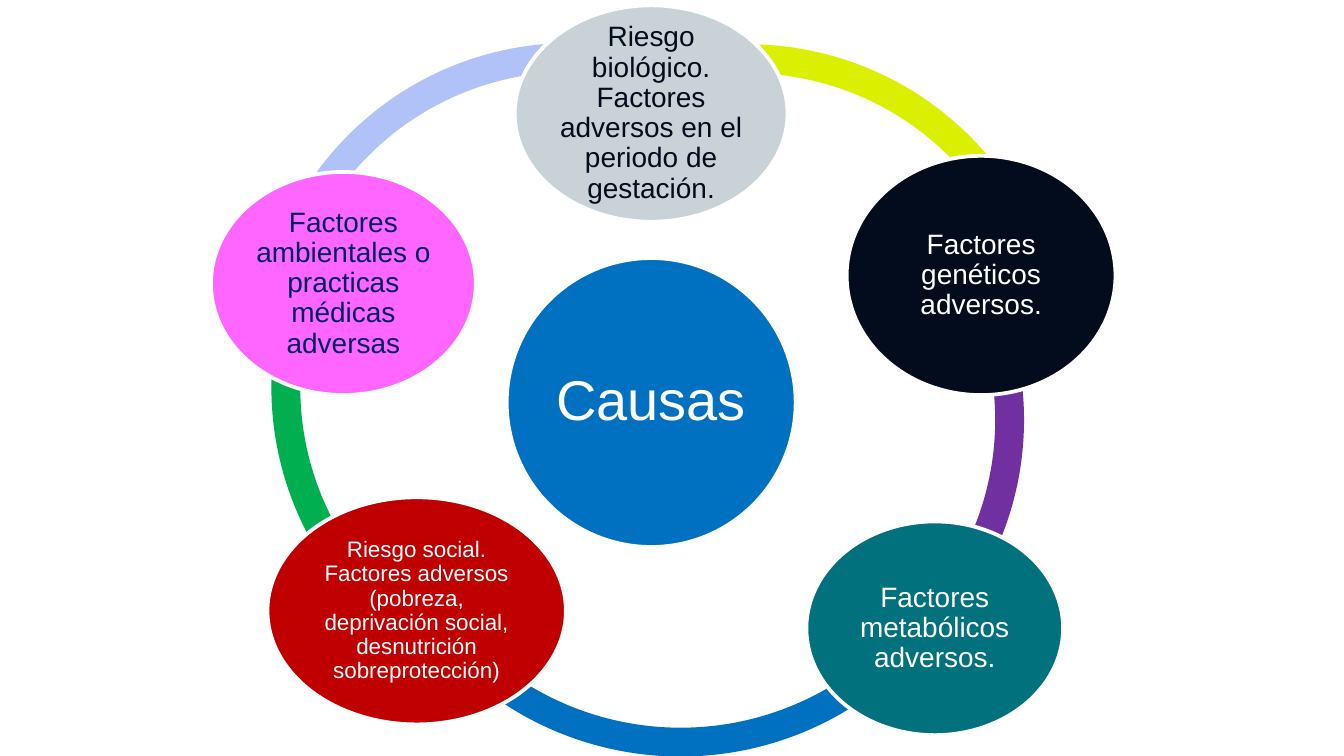
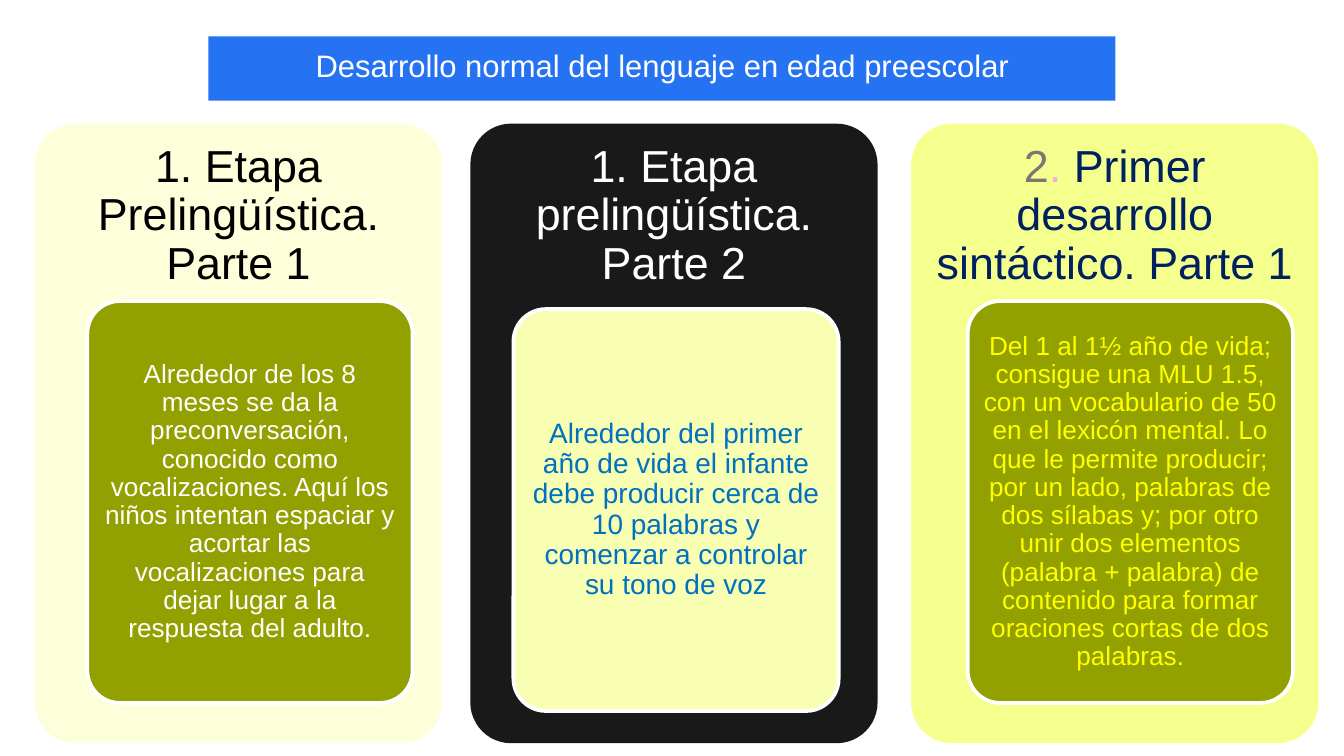
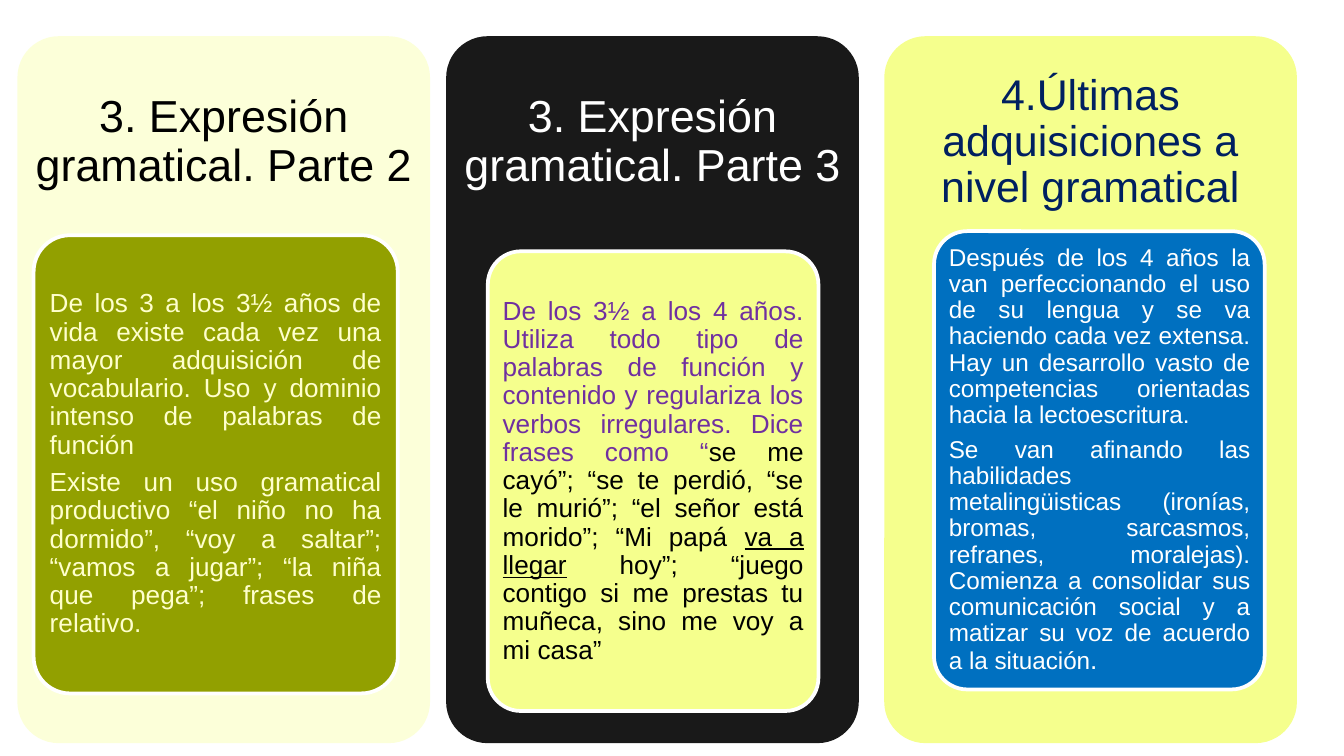
"""Build three slides on the causes and stages of language development."""
from pptx import Presentation
from pptx.dml.color import RGBColor
from pptx.enum.shapes import MSO_SHAPE as SHAPE
from pptx.enum.text import MSO_ANCHOR as ANCHOR, MSO_AUTO_SIZE as FIT, PP_ALIGN as ALIGN
from pptx.util import Pt

PX = 9144
FONT = "Arial"
COLORS = {
    "white": "FFFFFF", "black": "000000", "charcoal": "191919", "ink": "020C1D",
    "navy": "002060", "blue": "0070C0", "banner": "2572F2", "sky": "B0C2F8",
    "green": "00B050", "purple": "7030A0", "lime": "DBF000", "silver": "C9D3D7",
    "teal": "00717D", "red": "C00000", "pink": "FF66FF", "rose": "F5A9E1",
    "gray": "777777", "ivory": "FCFFD9", "lemon": "F5FF8D", "cream": "F8FFB3",
    "olive": "92A000", "yellow": "FFFF00", "pale": "FFFFCC",
}


def draw_shape(page, kind, left, top, width, height, fill, outlined=False):
    """Add a filled preset shape, with a white outline on request."""
    shape = page.shapes.add_shape(kind, left * PX, top * PX, width * PX, height * PX)
    shape.shadow.inherit = False
    shape.fill.solid()
    shape.fill.fore_color.rgb = RGBColor.from_string(COLORS[fill])
    if outlined:
        shape.line.color.rgb = RGBColor.from_string(COLORS["white"])
        shape.line.width = Pt(2)
    else:
        shape.line.fill.background()
    return shape


def write_text(box, paragraphs, size=15, color="white", align=ALIGN.CENTER,
               anchor=ANCHOR.MIDDLE, inset=2, spacing=0.9, after=0.35):
    """Fill a box with paragraphs, each a string or a list of (text, format) spans."""
    frame = box.text_frame
    frame.word_wrap = True
    frame.auto_size = FIT.NONE
    frame.vertical_anchor = anchor
    frame.margin_left = frame.margin_right = inset * PX
    frame.margin_top = frame.margin_bottom = inset * PX
    for index, spans in enumerate(paragraphs):
        para = frame.add_paragraph() if index else frame.paragraphs[0]
        para.alignment = align
        para.line_spacing = spacing
        para.space_before = Pt(0)
        para.space_after = Pt(round(after * size, 1))
        for text, look in [(spans, {})] if isinstance(spans, str) else spans:
            span = para.add_run()
            span.text = text
            span.font.name = FONT
            span.font.size = Pt(look.get("size", size))
            span.font.underline = look.get("underline")
            span.font.color.rgb = RGBColor.from_string(COLORS[look.get("color", color)])


deck = Presentation()
deck.slide_width = 1000 * PX
deck.slide_height = deck.slide_width * 9 // 16
title_layout, blank_layout = deck.slide_layouts[5], deck.slide_layouts[6]

causes_page = deck.slides.add_slide(blank_layout)
arcs = [
    (191, 32, 467, 206.2, 276.1, "sky"),
    (202, 55, 467, 134.3, 200.7, "green"),
    (270, 96, 473, 34, 149.8, "blue"),
    (295, 79, 467, 332, 42.8, "purple"),
    (323, 33, 467, 259.3, 332.9, "lime"),
]
for left, top, width, start, end, fill in arcs:
    arc = draw_shape(causes_page, SHAPE.BLOCK_ARC, left, top, width, 467, fill)
    for index, value in enumerate((start * 0.6, end * 0.6, 0.046)):
        arc.adjustments[index] = value

causes = [
    (377, 192, 215, 215, "blue", "Causas", {"size": 30, "inset": 4}),
    (383, 4, 203, 161, "silver",
     "Riesgo biológico. Factores adversos en el periodo de gestación.", {"color": "ink"}),
    (630, 116, 200, 178, "ink", "Factores genéticos adversos.", {}),
    (600, 388, 191, 159, "teal", "Factores metabólicos adversos.", {}),
    (199, 370, 222, 169, "red",
     "Riesgo social. Factores adversos (pobreza, deprivación social, desnutrición "
     "sobreprotección)", {"size": 12}),
    (157, 128, 197, 166, "pink",
     "Factores ambientales o practicas médicas adversas", {"color": "navy"}),
]
for left, top, width, height, fill, text, look in causes:
    draw_shape(causes_page, SHAPE.OVAL, left, top, width, height, fill, outlined=True)
    side, rise = round(width * 0.146), round(height * 0.146)
    label = causes_page.shapes.add_textbox(
        (left + side) * PX, (top + rise) * PX,
        (width - 2 * side) * PX, (height - 2 * rise) * PX)
    write_text(label, [text], **look)

early_page = deck.slides.add_slide(title_layout)
title = early_page.shapes.title
title.left, title.top, title.width, title.height = 155 * PX, 27 * PX, 675 * PX, 48 * PX
title.fill.solid()
title.fill.fore_color.rgb = RGBColor.from_string(COLORS["banner"])
write_text(title, ["Desarrollo normal del lenguaje en edad preescolar"],
           size=16.6, anchor=ANCHOR.TOP, inset=10, spacing=0.95, after=0)
late_page = deck.slides.add_slide(blank_layout)

early_stages = [
    (26, "ivory", ["1. Etapa Prelingüística. Parte 1"], {"color": "black"},
     (65, 224, 242, 299), "olive",
     ["Alrededor de los 8 meses se da la preconversación, conocido como vocalizaciones. "
      "Aquí los niños intentan espaciar y acortar las vocalizaciones para dejar lugar a "
      "la respuesta del adulto."], {"size": 14}),
    (350, "charcoal", ["1. Etapa prelingüística. Parte 2"], {},
     (382, 230, 242, 299), "cream",
     ["Alrededor del primer año de vida el infante debe producir cerca de 10 palabras y "
      "comenzar a controlar su tono de voz"], {"color": "blue"}),
    (678, "lemon",
     [[("2", {"color": "gray"}), (". ", {"color": "rose"}),
       ("Primer desarrollo sintáctico. Parte 1", {})]], {"color": "navy"},
     (720, 224, 242, 299), "olive",
     ["Del 1 al 1½ año de vida; consigue una MLU 1.5, con un vocabulario de 50 en el "
      "lexicón mental. Lo que le permite producir; por un lado, palabras de dos sílabas "
      "y; por otro unir dos elementos (palabra + palabra) de contenido para formar "
      "oraciones cortas de dos palabras."], {"size": 14, "color": "yellow"}),
]
late_stages = [
    (13, "ivory", ["3. Expresión gramatical. Parte 2"], {"color": "black"},
     (25, 175, 271, 341), "olive",
     ["De los 3 a los 3½ años de vida existe cada vez una mayor adquisición de "
      "vocabulario. Uso y dominio intenso de palabras de función",
      "Existe un uso gramatical productivo “el niño no ha dormido”, “voy a saltar”; "
      "“vamos a jugar”; “la niña que pega”; frases de relativo."],
     {"size": 14, "color": "pale"}),
    (332, "charcoal", ["3. Expresión gramatical. Parte 3"], {},
     (363, 187, 246, 342), "lemon",
     [[("De los 3½ a los 4 años. Utiliza todo tipo de palabras de función y contenido y "
        "regulariza los verbos irregulares. Dice frases como “", {"color": "purple"}),
       ("se me cayó”; “se te perdió, “se le murió”; “el señor está morido”; “Mi papá ", {}),
       ("va a llegar", {"underline": True}),
       (" hoy”; “juego contigo si me prestas tu muñeca, sino me voy a mi casa”", {})]],
     {"size": 14, "color": "black"}),
    (658, "lemon", ["4.Últimas adquisiciones a nivel gramatical"],
     {"size": 23, "color": "navy"},
     (695, 172, 246, 341), "blue",
     ["Después de los 4 años la van perfeccionando el uso de su lengua y se va haciendo "
      "cada vez extensa. Hay un desarrollo vasto de competencias orientadas hacia la "
      "lectoescritura.",
      [("Se van afinando las habilidades metalingüisticas (ironías, bromas, sarcasmos, "
        "refranes, moralejas). Comienza a consolidar sus comunicación social y a matizar "
        "su voz de acuerdo a la situación", {}), (".", {"size": 14})]], {"size": 13}),
]
boards = [
    (early_page, 92, 303, 461, ALIGN.CENTER, early_stages),
    (late_page, 27, 307, 526, ALIGN.JUSTIFY, late_stages),
]
for page, top, width, height, align, stages in boards:
    for left, fill, heading, heading_look, card, card_fill, body, body_look in stages:
        panel = draw_shape(page, SHAPE.ROUNDED_RECTANGLE, left, top, width, height, fill)
        panel.adjustments[0] = 0.1
        header = page.shapes.add_textbox(
            left * PX, top * PX, width * PX, round(height * 0.3) * PX)
        write_text(header, heading, **{"size": 24, "inset": 10, **heading_look})

        tile = draw_shape(page, SHAPE.ROUNDED_RECTANGLE, *card, card_fill, outlined=True)
        tile.adjustments[0] = 0.1
        card_left, card_top, card_width, card_height = card
        edge = round(card_width * 0.03)
        content = page.shapes.add_textbox(
            (card_left + edge) * PX, (card_top + edge) * PX,
            (card_width - 2 * edge) * PX, (card_height - 2 * edge) * PX)
        write_text(content, body, align=align, inset=4, **body_look)

deck.save("out.pptx")
